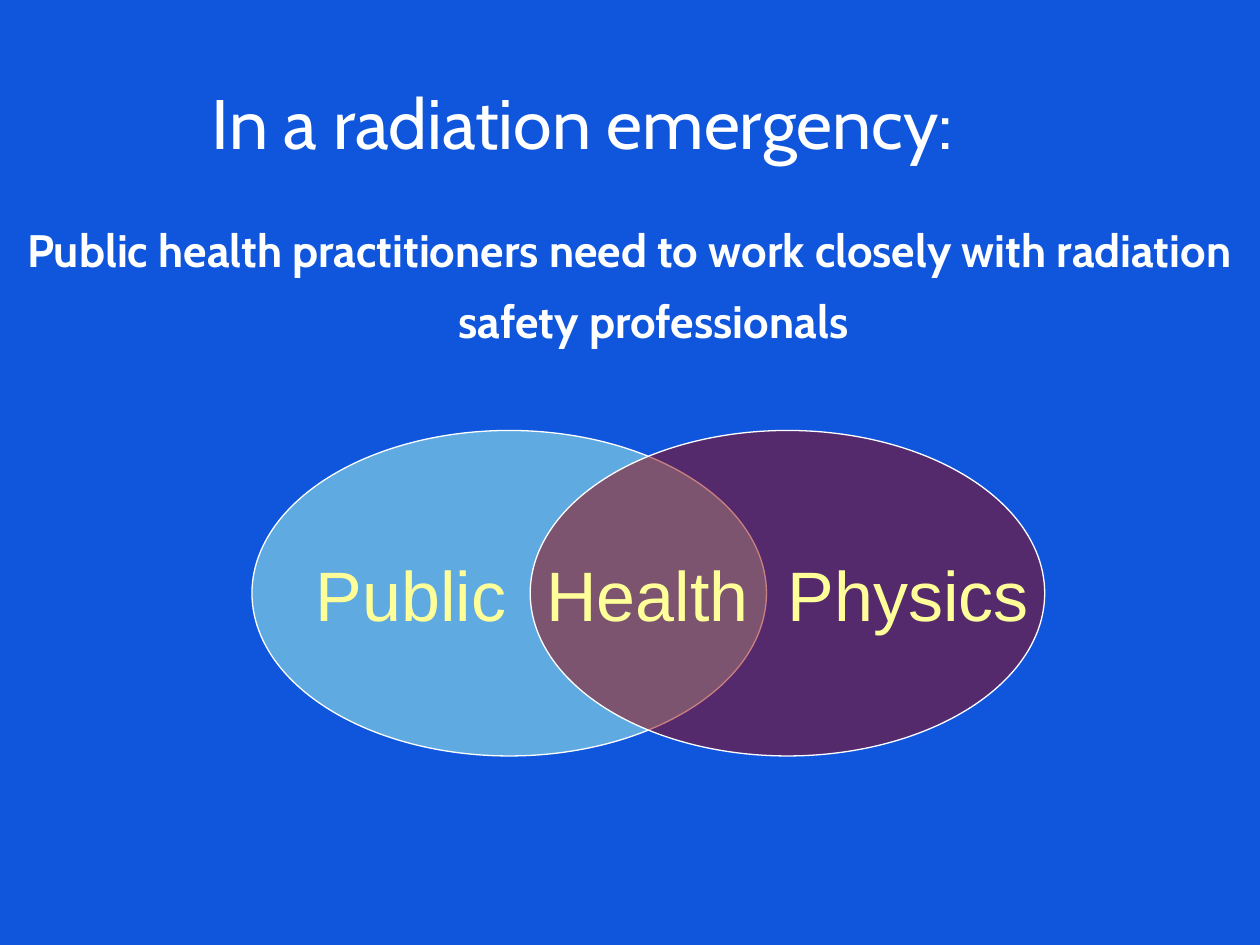
import pptx
import pptx.dml.color
import pptx.enum.shapes
import pptx.enum.text
import pptx.oxml
import pptx.util
from pptx.oxml.ns import qn

Pt = pptx.util.Pt
ALIGN = pptx.enum.text.PP_ALIGN
ANCHOR = pptx.enum.text.MSO_ANCHOR

TITLE = "In a radiation emergency:"
MESSAGE = ("Public health practitioners need to work closely with "
           "radiation safety professionals")
ELLIPSES = [(144, "B2FFE8"), (303, "990000")]  # left edge, fill
ELLIPSE_TOP, ELLIPSE_WIDTH, ELLIPSE_HEIGHT = 246, 294, 186
LABELS = [("Public", 235), ("Health", 370), ("Physics", 519)]  # word, centre
LABEL_WIDTH, LABEL_HEIGHT = 160, 60


def rgb(value):
    return pptx.dml.color.RGBColor.from_string(value)


def add_text(slide, text, box, font_name, size, color, align=ALIGN.LEFT,
             anchor=ANCHOR.TOP, bold=False):
    """Add a wrapped one-paragraph text box and return its paragraph."""
    frame = slide.shapes.add_textbox(*map(Pt, box)).text_frame
    frame.word_wrap = True
    frame.vertical_anchor = anchor
    paragraph = frame.paragraphs[0]
    paragraph.text = text
    paragraph.alignment = align
    font = paragraph.font
    font.name, font.size, font.bold = font_name, Pt(size), bold
    font.color.rgb = rgb(color)
    return paragraph


def add_half_transparent_ellipse(slide, left, color):
    shape = slide.shapes.add_shape(
        pptx.enum.shapes.MSO_SHAPE.OVAL, Pt(left), Pt(ELLIPSE_TOP),
        Pt(ELLIPSE_WIDTH), Pt(ELLIPSE_HEIGHT))
    shape.shadow.inherit = False
    shape.fill.solid()
    shape.fill.fore_color.rgb = rgb(color)
    fill_color = shape.fill._xPr.find(qn("a:solidFill")).find(qn("a:srgbClr"))
    fill_color.append(pptx.oxml.parse_xml(
        '<a:alpha xmlns:a="http://schemas.openxmlformats.org/drawingml/2006/main"'
        ' val="50000"/>'))
    shape.line.color.rgb = rgb("FFFFFF")
    shape.line.width = Pt(0.75)


def main():
    presentation = pptx.Presentation()
    presentation.slide_width, presentation.slide_height = Pt(720), Pt(540)
    slide = presentation.slides.add_slide(presentation.slide_layouts[6])
    slide.background.fill.solid()
    slide.background.fill.fore_color.rgb = rgb("0F56DC")

    add_text(slide, TITLE, (114, 42, 522, 90), "Cabin", 40, "FFFFFF")
    message = add_text(slide, MESSAGE, (0, 114, 720, 356), "Cabin", 26,
                       "FFFFFF", ALIGN.CENTER, bold=True)
    message.line_spacing = 1.3
    hanging = Pt(27)
    properties = message._p.get_or_add_pPr()
    properties.set("marL", str(hanging))
    properties.set("indent", str(-hanging))

    for left, color in ELLIPSES:
        add_half_transparent_ellipse(slide, left, color)

    label_top = ELLIPSE_TOP + (ELLIPSE_HEIGHT - LABEL_HEIGHT) / 2
    for word, centre in LABELS:
        box = (centre - LABEL_WIDTH / 2, label_top, LABEL_WIDTH, LABEL_HEIGHT)
        add_text(slide, word, box, "Arial", 40, "FFFF99", ALIGN.CENTER,
                 ANCHOR.MIDDLE)

    presentation.save("out.pptx")


if __name__ == "__main__":
    main()
